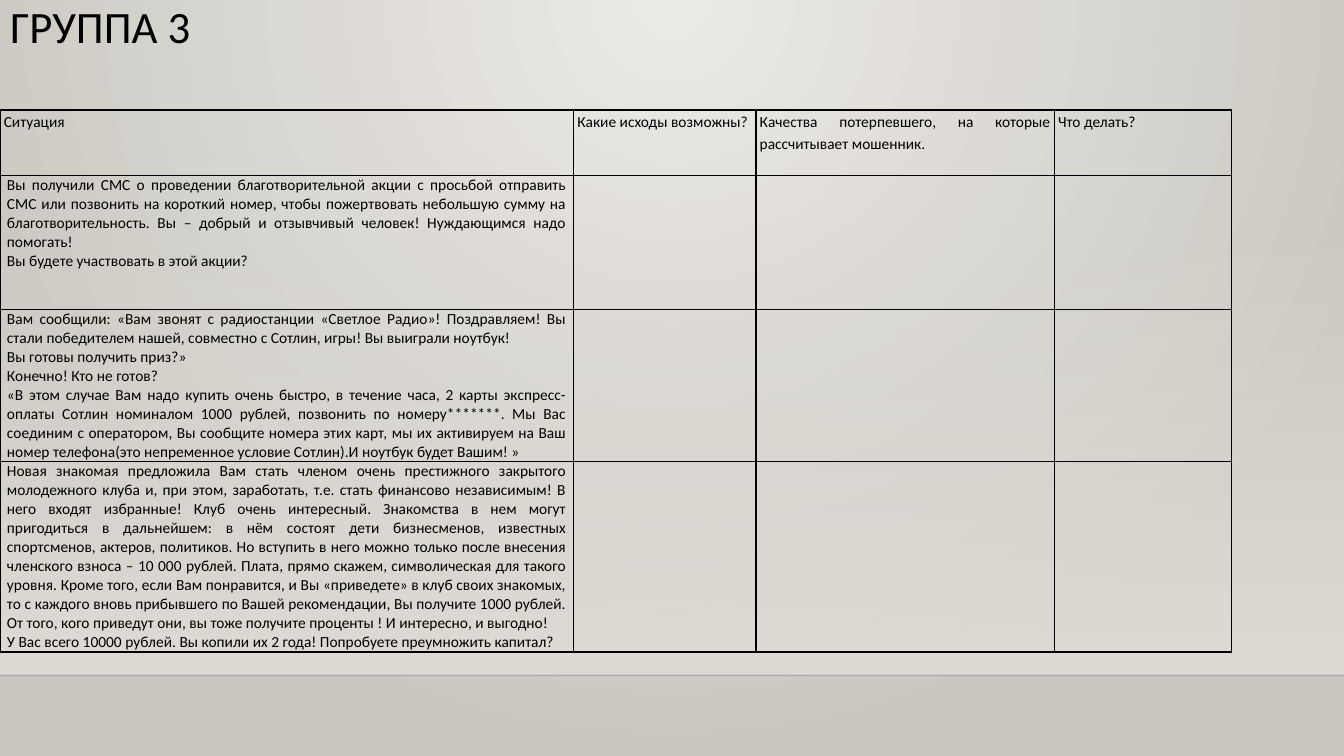
"""Builds the "ГРУППА 3" slide with its table of fraud situations."""
from dataclasses import dataclass

from lxml import etree
from pptx import Presentation
from pptx import util as u
from pptx.dml import color
from pptx.enum import shapes, text
from pptx.oxml import ns


@dataclass(frozen=True)
class Theme:
    font: str = "Calibri"
    ink: str = "000000"
    floor_edge: str = "000001"
    wall: str = "DFDBD5"
    glow: str = "ECEAE7"
    shade: str = "CAC7C1"
    title_size: float = 32
    table_size: float = 11


THEME = Theme()
WIDTH, HEIGHT = 960, 540
WALL_TOP, FLOOR_TOP = 159, 482.4
TABLE_TOP = 78.6
COLUMN_WIDTHS = (409.7, 130.3, 213.1, 126.9)
ROW_HEIGHTS = (46.8, 95.8, 108.6, 135.6)

HEADINGS = (
    "Ситуация",
    "Какие исходы возможны?",
    "Качества потерпевшего, на которые рассчитывает мошенник.",
    "Что делать?",
)
SITUATIONS = (
    (
        "Вы получили СМС о проведении благотворительной акции с просьбой отправить "
        "СМС или позвонить на короткий номер, чтобы пожертвовать небольшую сумму на "
        "благотворительность. Вы – добрый и отзывчивый человек! Нуждающимся надо помогать!",
        "Вы будете участвовать в этой акции?",
    ),
    (
        "Вам сообщили: «Вам звонят с радиостанции «Светлое Радио»! Поздравляем! Вы "
        "стали победителем нашей, совместно с Сотлин, игры! Вы выиграли ноутбук!",
        "Вы готовы получить приз?»",
        "Конечно! Кто не готов?",
        "«В этом случае Вам надо купить очень быстро, в течение часа, 2 карты "
        "экспресс-оплаты Сотлин номиналом 1000 рублей, позвонить по номеру*******. "
        "Мы Вас соединим с оператором, Вы сообщите номера этих карт, мы их активируем "
        "на Ваш номер телефона(это непременное условие Сотлин).И ноутбук будет Вашим! »",
    ),
    (
        "Новая знакомая предложила Вам стать членом очень престижного закрытого "
        "молодежного клуба и, при этом, заработать, т.е. стать финансово независимым! "
        "В него входят избранные! Клуб очень интересный. Знакомства в нем могут "
        "пригодиться в дальнейшем: в нём состоят дети бизнесменов, известных "
        "спортсменов, актеров, политиков. Но вступить в него можно только после "
        "внесения членского взноса – 10 000 рублей. Плата, прямо скажем, символическая "
        "для такого уровня. Кроме того, если Вам понравится, и Вы «приведете» в клуб "
        "своих знакомых, то с каждого вновь прибывшего по Вашей рекомендации, Вы "
        "получите 1000 рублей. От того, кого приведут они, вы тоже получите проценты ! "
        "И интересно, и выгодно!",
        "У Вас всего 10000 рублей. Вы копили их 2 года! Попробуете преумножить капитал?",
    ),
)


def apply_format(target, values):
    """Set every attribute named in values on target."""
    for attribute, value in values.items():
        setattr(target, attribute, value)


def format_font(font, size):
    """Give a font the theme's face and colour."""
    apply_format(font, {"name": THEME.font, "size": u.Pt(size), "bold": False})
    font.color.rgb = color.RGBColor.from_string(THEME.ink)


def set_alpha(colour, percent):
    """Make an srgbClr element partly transparent."""
    etree.SubElement(colour, ns.qn("a:alpha"), val=str(percent * 1000))


def set_stops(fill, colours):
    """Turn a fill into a two-stop gradient and return its element."""
    fill.gradient()
    for stop, position, colour in zip(fill.gradient_stops, (0, 1), colours):
        stop.position = position
        stop.color.rgb = color.RGBColor.from_string(colour)


def paint_background(slide):
    """Spread a circular glow from the top middle of the slide."""
    set_stops(slide.background.fill, (THEME.glow, THEME.shade))
    gradient = slide.element.find(".//" + ns.qn("a:gradFill"))
    linear = gradient.find(ns.qn("a:lin"))
    circle = etree.Element(ns.qn("a:path"), {"path": "circle"})
    etree.SubElement(circle, ns.qn("a:fillToRect"), l="43000", t="0", r="43000", b="100000")
    gradient.replace(linear, circle)


def add_wall(slide):
    """Add the band that fades in towards the floor."""
    wall = slide.shapes.add_shape(
        shapes.MSO_SHAPE.RECTANGLE, 0, u.Pt(WALL_TOP), u.Pt(WIDTH), u.Pt(FLOOR_TOP - WALL_TOP)
    )
    wall.shadow.inherit = False
    wall.line.fill.background()
    set_stops(wall.fill, (THEME.wall, THEME.wall))
    wall.fill.gradient_angle = 270
    set_alpha(wall.element.spPr.find(".//" + ns.qn("a:srgbClr")), 0)


def add_floor_edge(slide):
    """Add the faint line between wall and floor."""
    edge = slide.shapes.add_connector(
        shapes.MSO_CONNECTOR.STRAIGHT, 0, u.Pt(FLOOR_TOP), u.Pt(WIDTH), u.Pt(FLOOR_TOP)
    )
    edge.line.width = u.Pt(1)
    edge.line.color.rgb = color.RGBColor.from_string(THEME.floor_edge)
    properties = edge.element.spPr
    set_alpha(properties.find(".//" + ns.qn("a:srgbClr")), 20)
    etree.SubElement(properties, ns.qn("a:effectLst"))


def place_title(slide, wording):
    """Move and format the title placeholder."""
    title = slide.shapes.title
    apply_format(title, {"left": 0, "top": 0, "width": u.Pt(828), "height": u.Pt(104.4)})
    frame = title.text_frame
    frame.text = wording
    apply_format(frame, {
        "vertical_anchor": text.MSO_ANCHOR.TOP,
        "auto_size": text.MSO_AUTO_SIZE.NONE,
        "word_wrap": True,
    })
    heading = frame.paragraphs[0]
    apply_format(heading, {"alignment": text.PP_ALIGN.LEFT, "line_spacing": 0.9})
    format_font(heading.runs[0].font, THEME.title_size)


def draw_borders(cell):
    """Outline a cell on all four sides."""
    properties = cell._tc.get_or_add_tcPr()
    for index, side in enumerate(("lnL", "lnR", "lnT", "lnB")):
        border = etree.Element(ns.qn("a:" + side), w=str(u.Pt(1)))
        solid = etree.SubElement(border, ns.qn("a:solidFill"))
        etree.SubElement(solid, ns.qn("a:srgbClr"), val=THEME.ink)
        properties.insert(index, border)


def fill_cell(cell, wordings, inset, spacing):
    """Write justified paragraphs into a clear, outlined cell."""
    cell.fill.background()
    draw_borders(cell)
    apply_format(cell, {
        "margin_left": u.Pt(inset), "margin_right": u.Pt(inset),
        "margin_top": 0, "margin_bottom": 0,
    })
    cell.text = "\n".join(wordings)
    for paragraph in cell.text_frame.paragraphs:
        apply_format(paragraph, {"alignment": text.PP_ALIGN.JUSTIFY, "line_spacing": spacing})
        format_font(paragraph.font, THEME.table_size)
        for run in paragraph.runs:
            format_font(run.font, THEME.table_size)


def add_situations(slide):
    """Add the table of situations with blank columns for answers."""
    blanks = ((),) * (len(HEADINGS) - 1)
    rows = [[(heading,) for heading in HEADINGS]]
    rows += [(situation, *blanks) for situation in SITUATIONS]
    table = slide.shapes.add_table(
        len(rows), len(HEADINGS), 0, u.Pt(TABLE_TOP),
        u.Pt(sum(COLUMN_WIDTHS)), u.Pt(sum(ROW_HEIGHTS)),
    ).table
    apply_format(table, {"first_row": False, "horz_banding": False})
    for column, width in zip(table.columns, COLUMN_WIDTHS):
        column.width = u.Pt(width)
    for index, (row, height, contents) in enumerate(zip(table.rows, ROW_HEIGHTS, rows)):
        row.height = u.Pt(height)
        inset, spacing = (5, 1.0) if index else (2.7, 1.15)
        for cell, wordings in zip(row.cells, contents):
            fill_cell(cell, wordings, inset, spacing)


def main():
    """Build and save the slide."""
    deck = Presentation()
    apply_format(deck, {"slide_width": u.Pt(WIDTH), "slide_height": u.Pt(HEIGHT)})
    slide = deck.slides.add_slide(deck.slide_layouts.get_by_name("Title Only"))
    paint_background(slide)
    add_wall(slide)
    add_floor_edge(slide)
    place_title(slide, "ГРУППА 3")
    add_situations(slide)
    deck.save("out.pptx")


if __name__ == "__main__":
    main()
